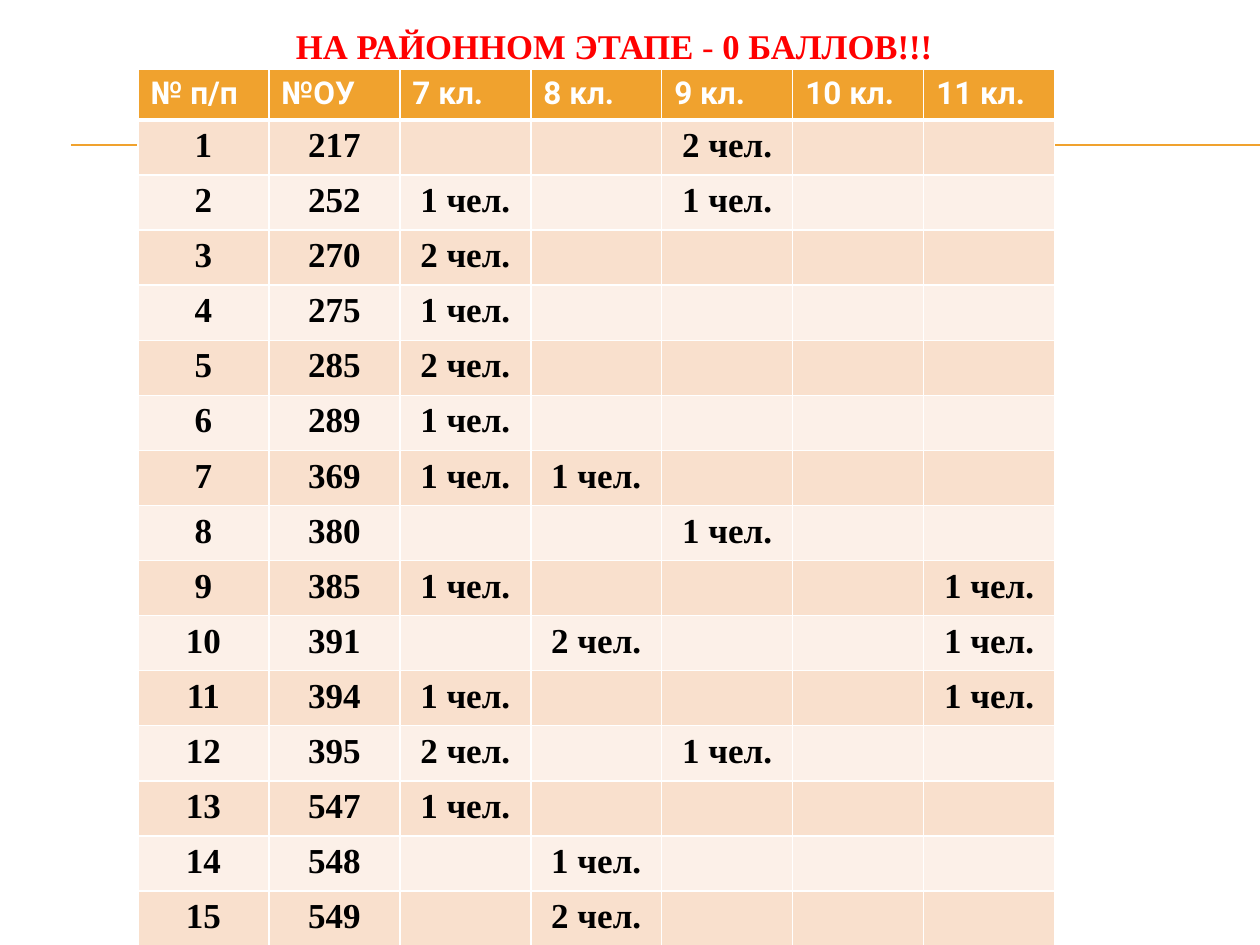
from pptx import Presentation
from pptx.dml.color import RGBColor as RGB
from pptx.enum.shapes import MSO_CONNECTOR as LINK
from pptx.enum.text import MSO_ANCHOR as ANCHOR, MSO_AUTO_SIZE as FIT, PP_ALIGN as ALIGN
from pptx.oxml.ns import qn
from pptx.util import Cm, Pt
from lxml.etree import SubElement

HUES = {"gold": "F0A22E", "dark": "F9E0CD", "light": "FCF0E8",
        "red": "FF0000", "white": "FFFFFF", "black": "000000"}
SERIF, SANS = "Times New Roman", "Roboto"
GRADES = [7, 8, 9, 10, 11]

# School number and its count of pupils by grade
SCHOOLS = [
    (217, {9: 2}), (252, {7: 1, 9: 1}), (270, {7: 2}), (275, {7: 1}),
    (285, {7: 2}), (289, {7: 1}), (369, {7: 1, 8: 1}), (380, {9: 1}),
    (385, {7: 1, 11: 1}), (391, {8: 2, 11: 1}), (394, {7: 1, 11: 1}),
    (395, {7: 2, 9: 1}), (547, {7: 1}), (548, {8: 1}), (549, {8: 2}),
]


def hue(name):
    return RGB.from_string(HUES[name])


def style(font, face, size, color, bold=True):
    font.name, font.size, font.bold = face, Pt(size), bold
    font.color.rgb = hue(color)


def add_rule(slide, top):
    rule = slide.shapes.add_connector(
        LINK.STRAIGHT, Cm(1.43), Cm(top), Cm(25.4), Cm(top))
    rule.line.color.rgb = hue("gold")
    rule.line.width = Pt(0.75)
    SubElement(rule._element.spPr, qn("a:effectLst"))


def fill_title(slide):
    title = slide.shapes.title
    title.left, title.top, title.width, title.height = 0, 0, Cm(24.61), Cm(1)
    frame = title.text_frame
    frame.auto_size, frame.word_wrap = FIT.NONE, True
    frame.vertical_anchor = ANCHOR.TOP
    frame.margin_left, frame.margin_top = Cm(0.4), Cm(0.5)
    frame.margin_bottom = 0
    line = frame.paragraphs[0]
    line.alignment = ALIGN.CENTER
    for text, bold in [("НА РАЙОННОМ ЭТАПЕ ", True), ("- ", False),
                       ("0 БАЛЛОВ!!!", True)]:
        run = line.add_run()
        run.text = text
        style(run.font, SERIF, 19.8, "red", bold)


def add_edges(cell, top, foot):
    props = cell._tc.get_or_add_tcPr()
    for side, width in [("L", 1), ("R", 1), ("T", top), ("B", foot)]:
        edge = SubElement(props, qn(f"a:ln{side}"), w=str(Pt(width)))
        paint = SubElement(edge, qn("a:solidFill"))
        SubElement(paint, qn("a:srgbClr"), val=HUES["white"])


def fill_cell(cell, text, row):
    # The header is parted from the body by a thick edge
    add_edges(cell, 3 if row == 1 else 1, 3 if row == 0 else 1)
    cell.fill.solid()
    band = "dark" if row % 2 else "light"
    cell.fill.fore_color.rgb = hue(band if row else "gold")
    cell.text = text
    line = cell.text_frame.paragraphs[0]
    if row:
        line.alignment = ALIGN.CENTER
        style(line.font, SERIF, 20, "black")
    else:
        style(line.font, SANS, 18, "white")


def list_rows():
    yield ["№ п/п", "№ОУ"] + [f"{grade} кл." for grade in GRADES]
    for place, (school, counts) in enumerate(SCHOOLS, 1):
        yield [str(place), str(school)] + [
            f"{counts[grade]} чел." if grade in counts else ""
            for grade in GRADES]


def add_grid(slide):
    rows = list(list_rows())
    wide = len(rows[0])
    grid = slide.shapes.add_table(
        len(rows), wide, Cm(2.78), Cm(1.4), Cm(2.64 * wide),
        Cm(1.02 + 1.11 * len(SCHOOLS))).table
    grid.horz_banding = False
    for column in grid.columns:
        column.width = Cm(2.64)
    for row, texts in enumerate(rows):
        grid.rows[row].height = Cm(1.11 if row else 1.02)
        for col, text in enumerate(texts):
            fill_cell(grid.cell(row, col), text, row)


def main():
    deck = Presentation()
    deck.slide_width, deck.slide_height = Cm(25.4), Cm(19.05)
    slide = deck.slides.add_slide(deck.slide_layouts[5])
    # Double rule behind the table
    for top in (2.92, 2.94):
        add_rule(slide, top)
    fill_title(slide)
    add_grid(slide)
    deck.save("out.pptx")


if __name__ == "__main__":
    main()
